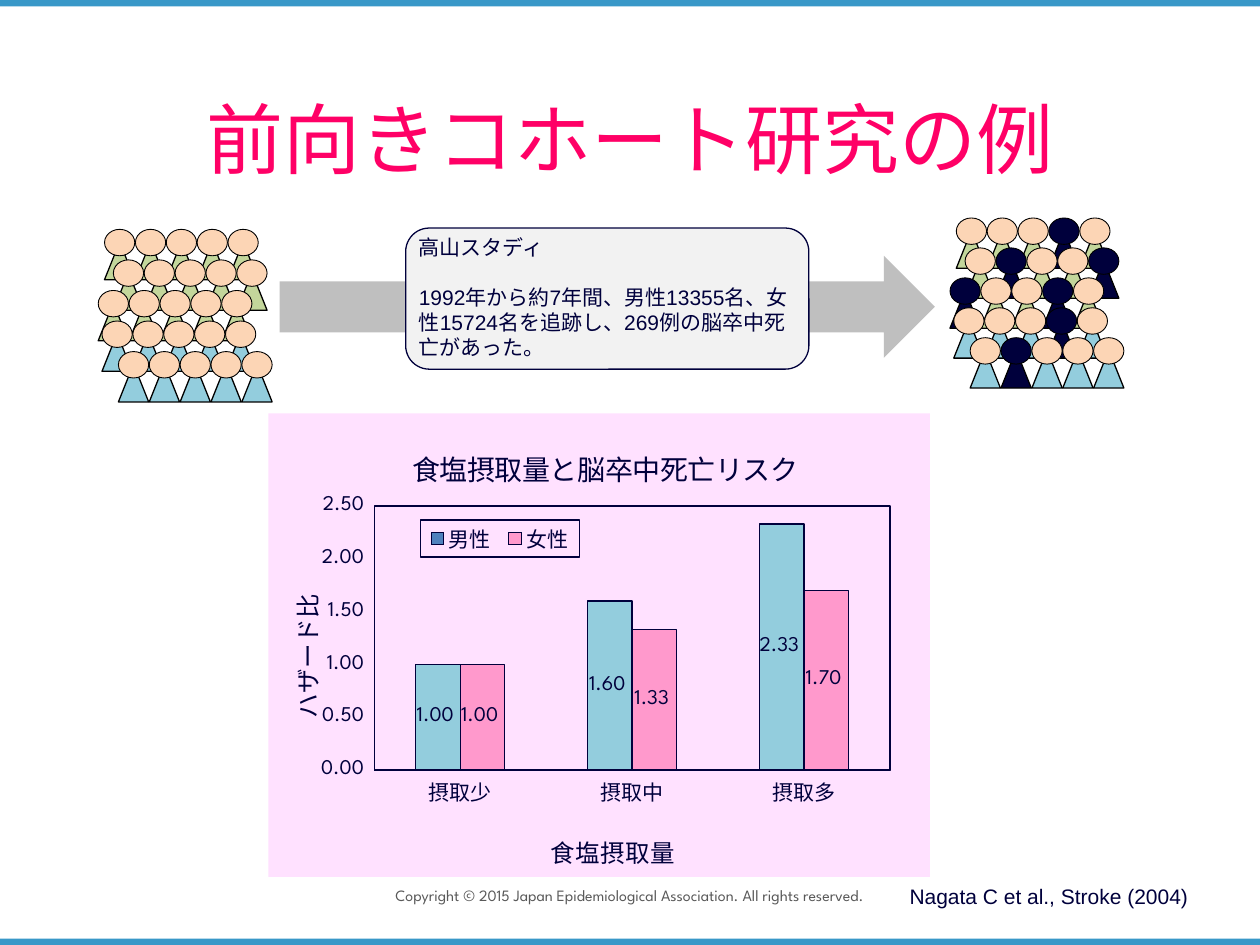
from lxml import etree
from pptx import Presentation, util as u
from pptx.chart.data import CategoryChartData
from pptx.dml.color import RGBColor
from pptx.enum import chart as ch, shapes as sh, text as tx
from pptx.oxml import parse_xml
from pptx.oxml.ns import nsdecls, qn

NAVY = RGBColor(0x00, 0x00, 0x3C)
BLACK = RGBColor(0x00, 0x00, 0x00)
BAND = RGBColor(0x39, 0x98, 0xC8)
HOT = RGBColor(0xFF, 0x00, 0x66)
GREY = RGBColor(0x59, 0x59, 0x59)
ARROW = RGBColor(0xBF, 0xBF, 0xBF)
PALE = RGBColor(0xF2, 0xF2, 0xF2)
SKIN = RGBColor(0xFC, 0xD5, 0xB5)
GREEN = RGBColor(0xC3, 0xD6, 0x9B)
AQUA = RGBColor(0x93, 0xCD, 0xDD)
BLUE = RGBColor(0x4F, 0x81, 0xBD)
PINK = RGBColor(0xFF, 0x99, 0xCC)
BLUSH = RGBColor(0xFF, 0xE1, 0xFF)

SANS, SPARTAN = "Arial", "League Spartan"
WIDE, HIGH = 10, 7.5
KIND = sh.MSO_SHAPE
SHIFTS = (0.05, 0.12, 0, 0.03, 0.16)
ROBES = (GREEN, GREEN, GREEN, AQUA, AQUA)
DEATHS = {(0, 3), (1, 1), (1, 4), (2, 0), (2, 3), (3, 3), (4, 1)}


def inches(*box):
    return [u.Inches(n) for n in box]


def style(font, size, name=SPARTAN, color=NAVY):
    font.size, font.name, font.bold = u.Pt(size), name, False
    font.color.rgb = color


def edge(line, color=NAVY, width=0.75):
    line.color.rgb, line.width = color, u.Pt(width)


def draw(shapes, kind, box, fill, line=None, width=0.75):
    shape = shapes.add_shape(kind, *inches(*box))
    shape.shadow.inherit = False
    shape.fill.solid()
    shape.fill.fore_color.rgb = fill
    if line is None:
        shape.line.fill.background()
    else:
        edge(shape.line, line, width)
    return shape


def label(slide, box, words, size, name, color, align, wrap=True):
    frame = slide.shapes.add_textbox(*inches(*box)).text_frame
    frame.word_wrap = wrap
    para = frame.paragraphs[0]
    para.text, para.alignment = words, align
    style(para.font, size, name, color)


def heading(slide, box):
    title = slide.shapes.title
    title.left, title.top, title.width, title.height = inches(*box)
    frame = title.text_frame
    frame.vertical_anchor = tx.MSO_ANCHOR.MIDDLE
    para = frame.paragraphs[0]
    para.text, para.alignment = "前向きコホート研究の例", tx.PP_ALIGN.CENTER
    style(para.font, 44, color=HOT)


def person(slide, x, y, robe, face):
    group = slide.shapes.add_group_shape().shapes
    draw(group, KIND.ISOSCELES_TRIANGLE, (x, y + 0.1, 0.24, 0.3), robe, BLACK)
    draw(group, KIND.OVAL, (x, y, 0.24, 0.21), face, BLACK, 0.5)


def crowd(slide, box, dead=()):
    x, y, w, h = box
    across, down = (w - 0.4) / 4, (h - 0.4) / 4
    for row, (shift, robe) in enumerate(zip(SHIFTS, ROBES)):
        for col in range(5):
            hues = (NAVY, NAVY) if (row, col) in dead else (robe, SKIN)
            person(slide, x + shift + col * across, y + row * down, *hues)


def study(slide, box):
    x, y, w, h = box
    draw(slide.shapes, KIND.RIGHT_ARROW, (x, y + 0.22, w, 0.81), ARROW)
    card = draw(slide.shapes, KIND.ROUNDED_RECTANGLE, (x + 1, y, 3.2, h), PALE, NAVY)
    frame = card.text_frame
    frame.word_wrap = True
    frame.vertical_anchor = tx.MSO_ANCHOR.TOP
    frame.margin_left = frame.margin_right = u.Inches(0.05)
    frame.margin_top = frame.margin_bottom = 0
    frame.text = ("高山スタディ\n1992年から約7年間、男性13355名、"
                  "女性15724名を追跡し、269例の脳卒中死亡があった。")
    for para in frame.paragraphs:
        para.alignment = tx.PP_ALIGN.LEFT
        style(para.font, 12, SANS)
    frame.paragraphs[1].space_before = u.Pt(14)


def place(part, after, **spots):
    for old in part.findall(qn("c:layout")):
        part.remove(old)
    layout = etree.Element(qn("c:layout"))
    manual = etree.SubElement(layout, qn("c:manualLayout"))
    if after is None:
        etree.SubElement(manual, qn("c:layoutTarget")).set("val", "inner")
        part.insert(0, layout)
    else:
        part.find(qn(after)).addnext(layout)
    for key in ("x", "y"):
        etree.SubElement(manual, qn(f"c:{key}Mode")).set("val", "edge")
    for key, val in spots.items():
        etree.SubElement(manual, qn(f"c:{key}")).set("val", str(val))


def frame_xml(fill, line):
    def paint(color):
        return (f'<a:solidFill><a:srgbClr val="{color}"/></a:solidFill>'
                if color else "<a:noFill/>")
    return parse_xml(f'<c:spPr {nsdecls("c", "a")}>{paint(fill)}'
                     f'<a:ln w="9525">{paint(line)}</a:ln></c:spPr>')


def caption(title, words, size, x, y):
    frame = title.text_frame
    frame.text = words
    style(frame.paragraphs[0].font, size)
    place(title._element, "c:tx", x=x, y=y)
    return frame


def scale(axis):
    axis.has_major_gridlines = False
    axis.major_tick_mark = axis.minor_tick_mark = ch.XL_TICK_MARK.NONE
    style(axis.tick_labels.font, 12)


def paint_bars(series, color):
    series.format.fill.solid()
    series.format.fill.fore_color.rgb = color
    edge(series.format.line)
    tags = series.data_labels
    tags.show_value = True
    tags.position = ch.XL_LABEL_POSITION.CENTER
    tags.number_format, tags.number_format_is_linked = "0.00_ ", False
    style(tags.font, 12)


def risk(slide, box):
    data = CategoryChartData()
    data.categories = ["摂取少", "摂取中", "摂取多"]
    data.add_series("男性", (1, 1.6, 2.33))
    data.add_series("女性", (1, 1.33, 1.7))
    chart = slide.shapes.add_chart(
        ch.XL_CHART_TYPE.COLUMN_CLUSTERED, *inches(*box), data).chart
    style(chart.font, 10, color=BLACK)
    chart.has_title = True
    caption(chart.chart_title, "食塩摂取量と脳卒中死亡リスク", 16, 0.21, 0.06)

    cats, vals = chart.category_axis, chart.value_axis
    scale(cats)
    scale(vals)
    edge(cats.format.line)
    vals.format.line.fill.background()
    vals.minimum_scale, vals.maximum_scale, vals.major_unit = 0, 2.5, 0.5
    vals.tick_labels.number_format = "0.00_ "
    vals.tick_labels.number_format_is_linked = False
    caption(cats.axis_title, "食塩摂取量", 14, 0.42, 0.89)
    side = caption(vals.axis_title, "ハザード比", 14, 0.02, 0.38)
    side._txBody.bodyPr.set("rot", "-5400000")
    side._txBody.bodyPr.set("vert", "horz")

    plot = chart.plots[0]
    plot.gap_width, plot.overlap, plot.vary_by_categories = 188, 0, False
    for series, color in zip(plot.series, (BLUE, PINK)):
        paint_bars(series, color)
    for i in range(3):
        point = plot.series[0].points[i].format
        point.fill.solid()
        point.fill.fore_color.rgb = AQUA
        edge(point.line)

    chart.has_legend = True
    key = chart.legend
    key.position = ch.XL_LEGEND_POSITION.BOTTOM
    key.include_in_layout = True
    style(key.font, 12)
    place(key._element, "c:legendPos", x=0.23, y=0.23, w=0.24, h=0.08)
    key._element.find(qn("c:overlay")).addnext(frame_xml(None, NAVY))

    root = chart._chartSpace
    area = root.chart.plotArea
    place(area, None, x=0.16, y=0.2, w=0.78, h=0.57)
    area.append(frame_xml(None, NAVY))
    root.chart.addnext(frame_xml(BLUSH, None))


def main():
    deck = Presentation()
    deck.slide_width, deck.slide_height = inches(WIDE, HIGH)
    slide = deck.slides.add_slide(deck.slide_layouts[5])
    for top in (0, HIGH - 0.05):
        draw(slide.shapes, KIND.RECTANGLE, (0, top, WIDE, 0.05), BAND)
    label(slide, (2.87, 6.98, 4.25, 0.25),
          "Copyright © 2015 Japan Epidemiological Association. All rights reserved.",
          9, SPARTAN, GREY, tx.PP_ALIGN.CENTER)
    heading(slide, (0.05 * WIDE, 0.58, 0.9 * WIDE, 1.02))
    crowd(slide, (0.78, 1.82, 1.38, 1.37))
    crowd(slide, (7.54, 1.73, 1.38, 1.35), DEATHS)
    study(slide, (2.22, 1.81, 5.2, 1.12))
    risk(slide, (2.13, 3.28, 5.25, 3.68))
    label(slide, (7.12, 6.96, 2.69, 0.3), "Nagata C et al., Stroke (2004)",
          12, SANS, NAVY, tx.PP_ALIGN.LEFT, False)
    deck.save("out.pptx")


if __name__ == "__main__":
    main()
